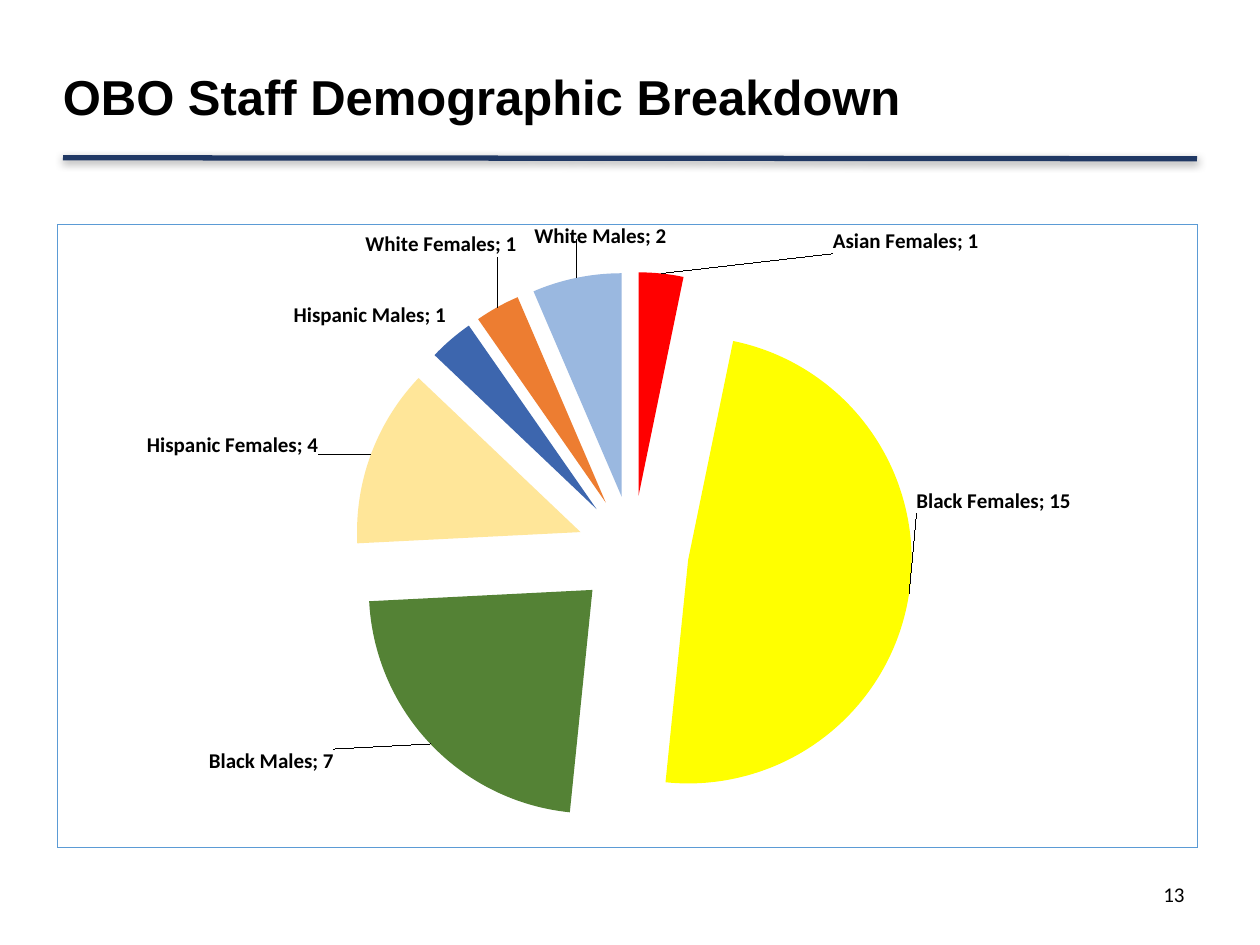
from lxml import etree
from pptx import Presentation
from pptx.chart.data import CategoryChartData
from pptx.dml.color import RGBColor
from pptx.enum.chart import XL_CHART_TYPE, XL_LABEL_POSITION
from pptx.enum.shapes import MSO_CONNECTOR
from pptx.enum.text import MSO_ANCHOR, PP_ALIGN
from pptx.oxml import parse_xml
from pptx.oxml.ns import nsdecls, qn
from pptx.util import Cm, Pt

PIE = XL_CHART_TYPE.PIE
OUTSIDE = XL_LABEL_POSITION.OUTSIDE_END
STRAIGHT = MSO_CONNECTOR.STRAIGHT
MIDDLE, TOP = MSO_ANCHOR.MIDDLE, MSO_ANCHOR.TOP
LEFT, RIGHT = PP_ALIGN.LEFT, PP_ALIGN.RIGHT

BLACK = RGBColor(0x00, 0x00, 0x00)
NAVY = RGBColor(0x20, 0x38, 0x64)
BLUE = RGBColor(0x5B, 0x9B, 0xD5)

TITLE = "OBO Staff Demographic Breakdown"
PAGE = "13"
# group, staff count, slice colour, label shift as a share of the chart
STAFF = [
    ("Asian Females", 1, RGBColor(0xFF, 0x00, 0x00), (0.15, -0.02)),
    ("Black Females", 15, RGBColor(0xFF, 0xFF, 0x00), (0, -0.17)),
    ("Black Males", 7, RGBColor(0x54, 0x82, 0x35), (-0.08, 0)),
    ("Hispanic Females", 4, RGBColor(0xFF, 0xE6, 0x99), (-0.04, 0.01)),
    ("Hispanic Males", 1, RGBColor(0x3D, 0x66, 0xAE), (0, -0.01)),
    ("White Females", 1, RGBColor(0xED, 0x7D, 0x31), (0.02, -0.07)),
    ("White Males", 2, RGBColor(0x9A, 0xB8, 0xE0), (0.08, -0.05)),
]
PLOT = {"x": 0.26, "y": 0.07, "w": 0.49, "h": 0.91}
EXPLODE = 25


def add_text(slide, box, text, font, size, bold=False, align=LEFT,
             anchor=TOP, inset=None):
    frame = slide.shapes.add_textbox(*map(Cm, box)).text_frame
    frame.word_wrap = True
    frame.vertical_anchor = anchor
    if inset is not None:
        frame.margin_left = frame.margin_right = Cm(inset)
        frame.margin_top = frame.margin_bottom = Cm(inset)
    para = frame.paragraphs[0]
    para.alignment = align
    run = para.add_run()
    run.text = text
    run.font.name, run.font.size, run.font.bold = font, Pt(size), bold
    run.font.color.rgb = BLACK
    return para


def add_rule(slide):
    rule = slide.shapes.add_connector(
        STRAIGHT, Cm(1.27), Cm(3.18), Cm(24.13), Cm(3.2))
    rule.line.color.rgb = NAVY
    rule.line.width = Pt(3)
    rule._element.spPr.append(parse_xml(
        f'<a:effectLst {nsdecls("a")}>'
        '<a:outerShdw blurRad="63500" dist="20320" dir="5400000">'
        '<a:srgbClr val="000000"><a:alpha val="38000"/></a:srgbClr>'
        '</a:outerShdw></a:effectLst>'))


def layout(parts, inner=False):
    """Manual chart layout; parts maps x, y, w, h to shares of the chart."""
    node = etree.Element(qn("c:layout"))
    man = etree.SubElement(node, qn("c:manualLayout"))
    if inner:
        etree.SubElement(man, qn("c:layoutTarget"), val="inner")
        for key in "xy":
            etree.SubElement(man, qn(f"c:{key}Mode"), val="edge")
    for key, part in parts.items():
        etree.SubElement(man, qn(f"c:{key}"), val=str(part))
    return node


def set_label(point, shift):
    label = point.data_label
    label.font.size, label.font.bold = Pt(12), True
    label.font.color.rgb = BLACK
    label.position = OUTSIDE
    node = label._get_or_add_dLbl()
    node.find(qn("c:idx")).addnext(layout(dict(zip("xy", shift))))
    node.find(qn("c:showVal")).set("val", "1")
    node.find(qn("c:showCatName")).set("val", "1")
    gap = etree.SubElement(node, qn("c:separator"))
    gap.text = "; "


def add_pie(slide):
    data = CategoryChartData()
    data.categories = [row[0] for row in STAFF]
    data.add_series("Series 1", [row[1] for row in STAFF])
    chart = slide.shapes.add_chart(
        PIE, Cm(1.15), Cm(4.52), Cm(22.99), Cm(12.57), data).chart
    chart.has_title = chart.has_legend = False
    chart.font.name, chart.font.size = "Calibri", Pt(18)
    chart.font.color.rgb = BLACK
    plot = chart.plots[0]
    plot.vary_by_categories = True
    series = plot.series[0]

    labels = series.data_labels
    labels.show_value = labels.show_category_name = True
    labels.font.size, labels.font.bold = Pt(12), True
    group = labels._element
    lead = group.find(qn("c:showLeaderLines"))
    if lead is None:
        lead = etree.SubElement(group, qn("c:showLeaderLines"))
    lead.set("val", "1")

    for i, (_, _, color, shift) in enumerate(STAFF):
        point = series.points[i]
        point.format.fill.solid()
        point.format.fill.fore_color.rgb = color
        point.format.line.fill.background()
        set_label(point, shift)
    burst = etree.Element(qn("c:explosion"), val=str(EXPLODE))
    series._element.find(qn("c:dPt")).addprevious(burst)

    space = chart._chartSpace
    area = space.find(qn("c:chart")).find(qn("c:plotArea"))
    old = area.find(qn("c:layout"))
    if old is not None:
        area.remove(old)
    area.insert(0, layout(PLOT, inner=True))
    space.find(qn("c:chart")).addnext(parse_xml(
        f'<c:spPr {nsdecls("c", "a")}><a:noFill/><a:ln>'
        f'<a:solidFill><a:srgbClr val="{BLUE}"/></a:solidFill>'
        '</a:ln></c:spPr>'))


def main():
    deck = Presentation()
    deck.slide_width, deck.slide_height = Cm(25.4), Cm(19.05)
    slide = deck.slides.add_slide(deck.slide_layouts[6])
    add_rule(slide)
    title = add_text(slide, (1.27, 0.84, 17.42, 2.34), TITLE, "Arial", 28,
                     bold=True, anchor=MIDDLE, inset=0)
    title.line_spacing = 0.9
    add_text(slide, (18.21, 17.65, 5.92, 1.02), PAGE, "Calibri", 12,
             align=RIGHT)
    add_pie(slide)
    deck.save("out.pptx")


if __name__ == "__main__":
    main()
